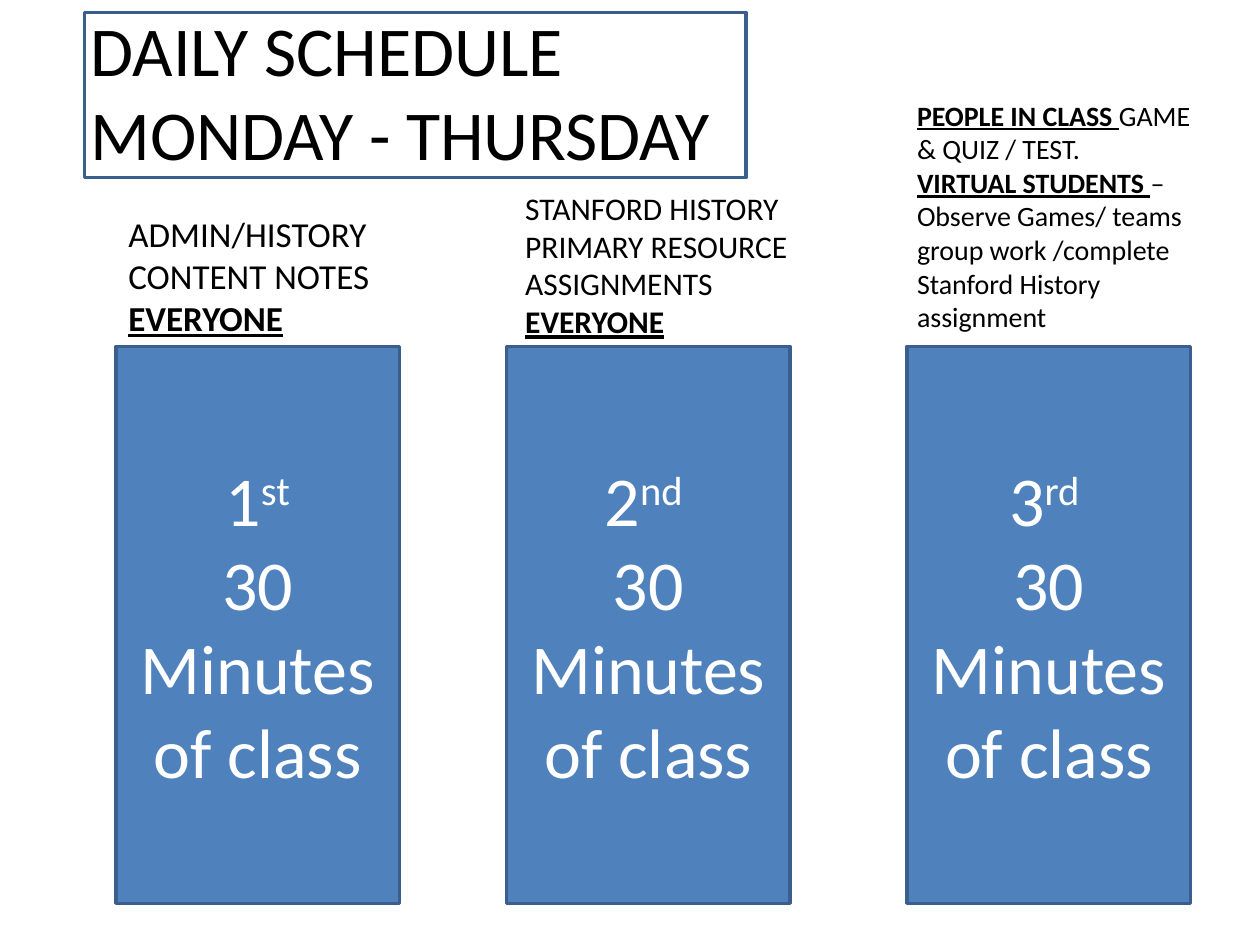
from pptx import Presentation
from pptx.dml.color import RGBColor
from pptx.enum.shapes import MSO_SHAPE
from pptx.enum.text import MSO_ANCHOR, MSO_AUTO_SIZE, PP_ALIGN
from pptx.util import Inches, Pt

COLORS = {"block": "4F81BD", "outline": "3A5F8C", "dark": "000000", "light": "FFFFFF"}
FONT = "Calibri"

presentation = Presentation()
presentation.slide_width = Inches(10)
presentation.slide_height = Inches(7.5)
slide = presentation.slides.add_slide(presentation.slide_layouts[5])


def area(left, top, width, height):
    """Turn percentages of the slide's size into lengths."""
    across, down = presentation.slide_width / 100, presentation.slide_height / 100
    return [round(left * across), round(top * down), round(width * across), round(height * down)]


def write(shape, paragraphs, size, color="dark", align=PP_ALIGN.LEFT, anchor=MSO_ANCHOR.TOP):
    """Fill a shape with paragraphs, each a list of (text, style) runs.

    The style is "plain", "strong" (bold and underlined) or "raised" (superscript).
    """
    frame = shape.text_frame
    frame.word_wrap = True
    frame.auto_size = MSO_AUTO_SIZE.NONE
    frame.vertical_anchor = anchor
    for index, runs in enumerate(paragraphs):
        paragraph = frame.add_paragraph() if index else frame.paragraphs[0]
        paragraph.alignment = align
        for text, style in runs:
            run = paragraph.add_run()
            run.text = text
            run.font.name = FONT
            run.font.size = Pt(size)
            run.font.color.rgb = RGBColor.from_string(COLORS[color])
            run.font.bold = run.font.underline = style == "strong"
            if style == "raised":
                run._r.get_or_add_rPr().set("baseline", "30000")


# Title and its frame
title = slide.shapes.title
title.left, title.top, title.width, title.height = area(6.2, 0, 85, 19.33)
write(title, [[("DAILY SCHEDULE", "plain")], [("MONDAY - THURSDAY", "plain")]], size=40)
title_frame = slide.shapes.add_shape(MSO_SHAPE.RECTANGLE, *area(6.7, 1.33, 52.5, 17.47))
title_frame.fill.background()

# One block for each third of the class
outlined = [title_frame]
for left, number, ending in [(9.2, "1", "st"), (40.2, "2", "nd "), (72, "3", "rd ")]:
    block = slide.shapes.add_shape(MSO_SHAPE.RECTANGLE, *area(left, 36.67, 22.5, 58.93))
    block.fill.solid()
    block.fill.fore_color.rgb = RGBColor.from_string(COLORS["block"])
    write(
        block,
        [[(number, "plain"), (ending, "raised")], [("30", "plain")], [("Minutes of class", "plain")]],
        size=40, color="light", align=PP_ALIGN.CENTER, anchor=MSO_ANCHOR.MIDDLE,
    )
    outlined.append(block)

for shape in outlined:
    shape.shadow.inherit = False
    shape.line.color.rgb = RGBColor.from_string(COLORS["outline"])
    shape.line.width = Pt(2)

# Activities above the blocks
everyone = [("EVERYONE", "strong")]
activities = [
    ((9.2, 21.87, 25.8, 14.8), 20, [[("ADMIN/HISTORY CONTENT NOTES", "plain")], everyone]),
    ((40.7, 19.33, 25, 21.6), 18, [
        [("STANFORD HISTORY", "plain")],
        [("PRIMARY RESOURCE ASSIGNMENTS", "plain")],
        everyone,
    ]),
    ((71.8, 9.73, 25, 34.53), 16, [
        [("PEOPLE IN CLASS ", "strong"), ("GAME & QUIZ / TEST.", "plain")],
        [
            ("VIRTUAL STUDENTS ", "strong"),
            ("– Observe Games/ teams group work /complete Stanford History assignment", "plain"),
        ],
    ]),
]
for position, size, paragraphs in activities:
    write(slide.shapes.add_textbox(*area(*position)), paragraphs, size)

presentation.save("out.pptx")
